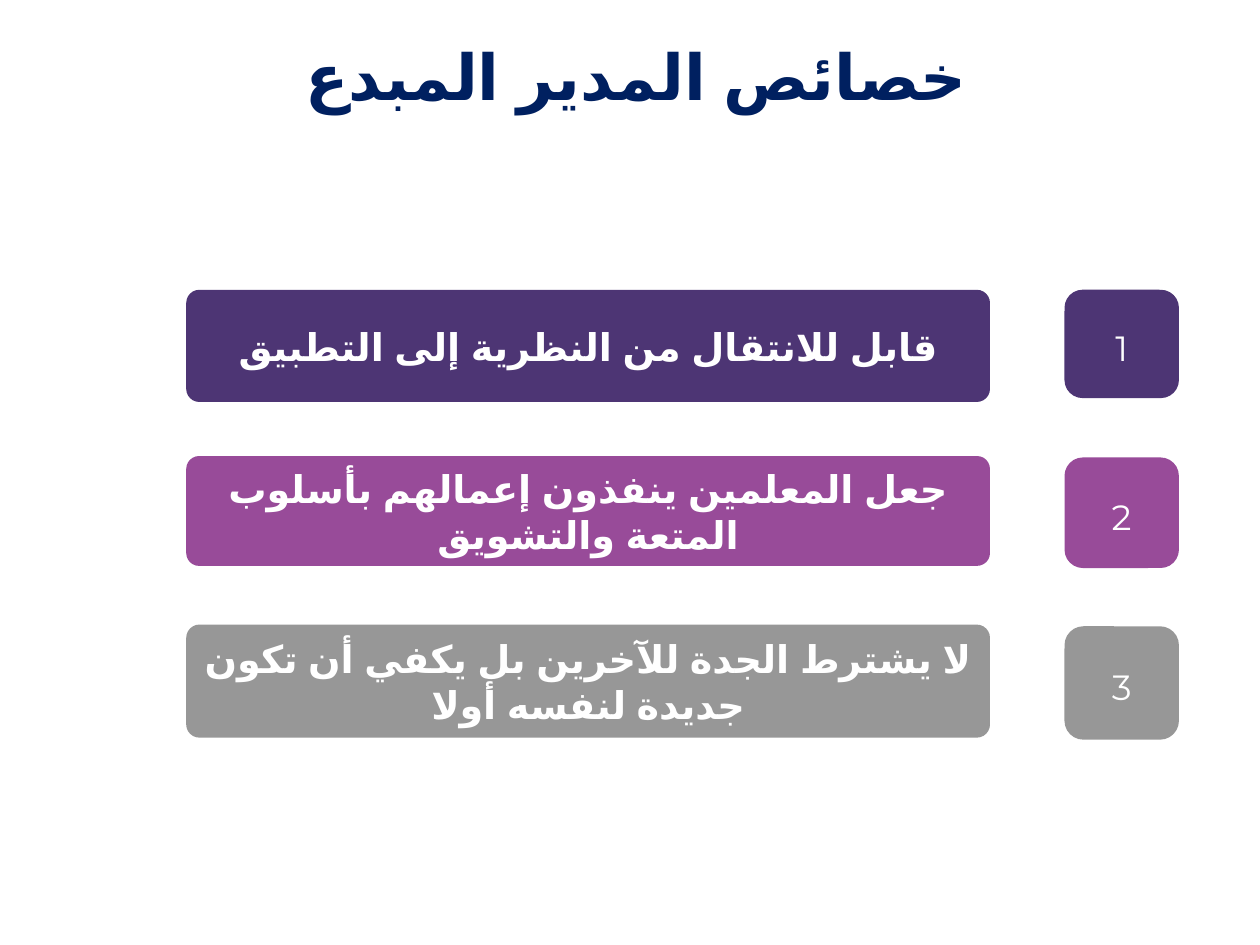
from pptx import Presentation
from pptx.dml.color import RGBColor
from pptx.enum.shapes import MSO_SHAPE
from pptx.enum.text import MSO_ANCHOR, MSO_AUTO_SIZE, PP_ALIGN
from pptx.oxml.ns import qn
from pptx.util import Pt
from lxml.etree import SubElement

COLORS = {"title": "002060", "purple": "4D3574", "magenta": "984B99",
          "gray": "979797", "white": "FFFFFF"}
FRAME = {"word_wrap": True, "auto_size": MSO_AUTO_SIZE.NONE,
         "margin_left": Pt(6.8), "margin_right": Pt(6.8),
         "margin_top": Pt(3.2), "margin_bottom": Pt(3.2)}
TITLE = {"name": "Montserrat", "size": Pt(36.3), "bold": True}
STATEMENT = {"name": "Arial", "size": Pt(21.8), "bold": True}
NUMBER = {"name": "Montserrat", "size": Pt(20), "bold": False}
ROWS = [
    ("قابل للانتقال من النظرية إلى التطبيق", "purple", (165.6, 64.1), (165.6, 61.9)),
    ("جعل المعلمين ينفذون إعمالهم بأسلوب المتعة والتشويق", "magenta",
     (260.6, 62.8), (261.4, 63.2)),
    ("لا يشترط الجدة للآخرين بل يكفي أن تكون جديدة لنفسه أولا", "gray",
     (356.9, 64.6), (357.9, 64.8)),
]


def set_values(target, values):
    """Set each attribute of the target from a dict."""
    for attribute, value in values.items():
        setattr(target, attribute, value)


def write_text(shape, text, style, color, anchor, spacing=None, rtl=False):
    """Write one centred, formatted run into a shape."""
    frame = shape.text_frame
    set_values(frame, {**FRAME, "vertical_anchor": anchor})
    paragraph = frame.paragraphs[0]
    set_values(paragraph, {"alignment": PP_ALIGN.CENTER, "line_spacing": spacing})
    run = paragraph.add_run()
    run.text = text
    set_values(run.font, style)
    run.font.color.rgb = RGBColor.from_string(COLORS[color])
    if rtl:
        paragraph._p.get_or_add_pPr().set("rtl", "1")
        run.font._element.set("lang", "ar-SA")
        SubElement(run.font._element, qn("a:cs"), typeface="Arial")


def place_title(slide, box, text):
    """Move and format the title placeholder."""
    title = slide.shapes.title
    set_values(title, dict(zip(("left", "top", "width", "height"), map(Pt, box))))
    write_text(title, text, TITLE, "title", MSO_ANCHOR.TOP, 1.18, rtl=True)


def add_card(slide, box, rounding, color):
    """Add a flat rounded card in one colour."""
    card = slide.shapes.add_shape(MSO_SHAPE.ROUNDED_RECTANGLE, *map(Pt, box))
    card.adjustments[0] = rounding
    card.shadow.inherit = False
    card.fill.solid()
    card.fill.fore_color.rgb = RGBColor.from_string(COLORS[color])
    card.line.fill.background()
    return card


def add_statements(slide, left, width):
    """Add the column of statement cards."""
    for text, color, (top, height), _ in ROWS:
        card = add_card(slide, (left, top, width, height), 0.117, color)
        write_text(card, text, STATEMENT, "white", MSO_ANCHOR.MIDDLE, rtl=True)


def add_numbers(slide, left, width):
    """Add the column of number cards."""
    for number, (_, color, _, (top, height)) in enumerate(ROWS, 1):
        card = add_card(slide, (left, top, width, height), 0.167, color)
        write_text(card, str(number), NUMBER, "white", MSO_ANCHOR.MIDDLE, 1.18)


def main():
    """Build and save the slide."""
    presentation = Presentation()
    set_values(presentation, {"slide_width": Pt(720), "slide_height": Pt(540)})
    slide = presentation.slides.add_slide(presentation.slide_layouts[5])
    place_title(slide, (51, 10, 625, 54), "خصائص المدير المبدع")
    add_statements(slide, 106.4, 459.3)
    add_numbers(slide, 608.3, 65.4)
    presentation.save("out.pptx")


if __name__ == "__main__":
    main()
